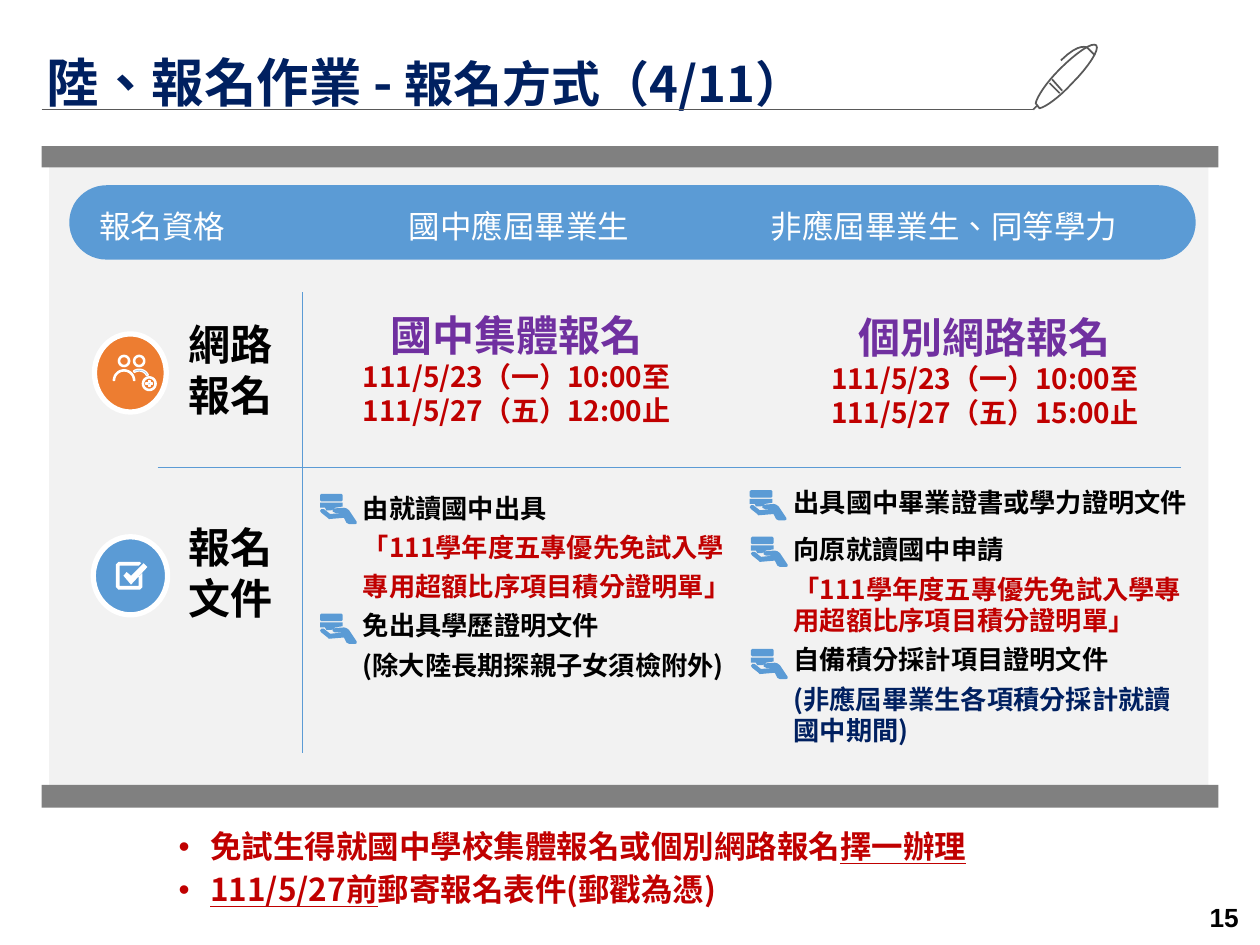
from math import cos, radians, sin

from lxml.etree import SubElement as Sub
from pptx import Presentation
from pptx.dml.color import RGBColor as RGB
from pptx.enum.shapes import MSO_CONNECTOR as Link, MSO_SHAPE as Kind
from pptx.enum.text import MSO_ANCHOR as Anchor, MSO_AUTO_SIZE as Fit, PP_ALIGN as Align
from pptx.oxml.ns import qn
from pptx.util import Inches, Pt

# Theme: colours, type sizes and fonts
look = {
    "blue": "5B9BD5", "orange": "ED7D31", "white": "FFFFFF", "panel": "F2F2F2",
    "bar": "808080", "pen": "595959", "black": "000000", "red": "C00000",
    "violet": "7030A0", "navy": "002060",
    "title": 30, "sub": 28, "head": 24, "note": 18, "date": 16, "item": 15,
    "font": "Noto Sans CJK SC", "num": "Arial",
}
ink = {k: RGB.from_string(v) for k, v in look.items()
       if isinstance(v, str) and len(v) == 6}

deck = Presentation()
deck.slide_width, deck.slide_height = Inches(10), Inches(7.5)
slide = deck.slides.add_slide(deck.slide_layouts[5])
parts = slide.shapes
cell = deck.slide_width // 100  # the slide is a grid of 100 columns by 75 rows


def write(frame, paras, box, para, font=look["font"]):
    """Fill a frame; a run is (text, size, colour, extra font values)."""
    for key, val in box.items():
        setattr(frame, key, val)
    for i, runs in enumerate(paras):
        p = frame.paragraphs[0] if i == 0 else frame.add_paragraph()
        for key, val in para.items():
            setattr(p, key, val)
        for words, size, tone, *more in runs:
            run = p.add_run()
            run.text = words
            form = {"name": font, "size": Pt(look[size]), "bold": True}
            for extra in more:
                form.update(extra)
            for key, val in form.items():
                setattr(run.font, key, val)
            run.font.color.rgb = ink[tone]
            run.font._element.set("lang", "zh-TW")
            Sub(run.font._element, qn("a:ea"), typeface=font)


def draw(paths, fill=None, line=None, width=1, close=True, at=(0, 0)):
    """Draw outlines; a step is a point, or six numbers for a curve."""
    build = None
    for path in paths:
        dots = [path[0]]
        for step in path[1:]:
            if len(step) == 2:
                dots.append(step)
                continue
            a, b, c, d, e, f = step
            x, y = dots[-1]
            for t in [n / 8 for n in range(1, 9)]:
                s = 1 - t
                w = s ** 3, 3 * s * s * t, 3 * s * t * t, t ** 3
                dots.append((w[0] * x + w[1] * a + w[2] * c + w[3] * e,
                             w[0] * y + w[1] * b + w[2] * d + w[3] * f))
        spots = [((x + at[0]) * cell, (y + at[1]) * cell) for x, y in dots]
        if build is None:
            build = parts.build_freeform(*spots[0])
        else:
            build.move_to(*spots[0])
        build.add_line_segments(spots[1:], close=close)
    form = build.convert_to_shape()
    form.shadow.inherit = False
    if fill:
        form.fill.solid()
        form.fill.fore_color.rgb = ink[fill]
    else:
        form.fill.background()
    if line:
        form.line.color.rgb, form.line.width = ink[line], Pt(width)
    else:
        form.line.fill.background()


# Title
title = parts.title
for key, val in zip(("left", "top", "width", "height"), (2.7, 4, 78.9, 4.8)):
    setattr(title, key, round(val * cell))
write(title.text_frame,
      [[("陸、報名作業 - ", "title", "navy"), ("報名方式（4/11）", "sub", "navy")]],
      {"auto_size": Fit.NONE, "word_wrap": True, "vertical_anchor": Anchor.TOP},
      {"alignment": Align.LEFT, "line_spacing": 0.9})

# Panel, bars, header band and icon discs
for kind, left, top, wide, high, fill, edge in [
    (Kind.RECTANGLE, 3.9, 12.5, 92, 49.8, "panel", 0),
    (Kind.RECTANGLE, 3.3, 11.6, 93.4, 1.7, "bar", 0),
    (Kind.RECTANGLE, 3.3, 62.3, 93.4, 1.8, "bar", 0),
    (Kind.OVAL, 7.5, 26.5, 5.7, 6.2, "orange", 3),
    (Kind.OVAL, 7.4, 42.6, 5.9, 6.2, "blue", 3),
    (Kind.ROUNDED_RECTANGLE, 5.5, 14.7, 89.4, 5.9, "blue", 0),
]:
    form = parts.add_shape(kind, *[round(v * cell) for v in (left, top, wide, high)])
    form.shadow.inherit = False
    form.fill.solid()
    form.fill.fore_color.rgb = ink[fill]
    if edge:
        form.line.color.rgb, form.line.width = ink["white"], Pt(edge)
    else:
        form.line.fill.background()

# Header words, set on tab stops
band = form
band.adjustments[0] = 0.5
write(band.text_frame,
      [[("報名資格\t國中應屆畢業生\t非應屆畢業生、同等學力", "note", "white", {"bold": False})]],
      {"vertical_anchor": Anchor.MIDDLE, "margin_left": Inches(0.15)},
      {"alignment": Align.LEFT, "line_spacing": 1.2})
tabs = Sub(band.text_frame.paragraphs[0]._p.get_or_add_pPr(), qn("a:tabLst"))
for stop in (24.6, 53.3):
    Sub(tabs, qn("a:tab"), pos=str(round(stop * cell)), algn="l")

# Rules
for x, y, right, low, tone, width in [
    (12.5, 37.1, 93.7, 37.1, "blue", 0.25),
    (24, 23.2, 24, 59.8, "blue", 0.25),
    (3.3, 8.7, 82, 8.7, "pen", 0.5),
]:
    rule = parts.add_connector(Link.STRAIGHT, *[round(v * cell) for v in (x, y, right, low)])
    rule.line.color.rgb, rule.line.width = ink[tone], Pt(width)
    Sub(rule._element.spPr, qn("a:effectLst"))

# Text blocks
tight = {"word_wrap": False, "vertical_anchor": Anchor.BOTTOM,
         "margin_left": Inches(0.07), "margin_right": Inches(0.07),
         "margin_top": Inches(0.04), "margin_bottom": Inches(0.04)}
label = {**tight, "word_wrap": True}
grow = {"word_wrap": True, "auto_size": Fit.SHAPE_TO_FIT_TEXT}
wrap = {"word_wrap": True}
mid = {"alignment": Align.CENTER}
list_gap = {"space_before": Pt(2.2), "space_after": Pt(2.2)}
point = {"line_spacing": 0.9, "space_before": Pt(10)}
under = {"underline": True}
blocks = {}
for name, place, box, para, paras in [
    ("web", (14.3, 25, 9, 8.7), label, {},
     [[("網路", "head", "black")], [("報名", "head", "black")]]),
    ("papers", (14.3, 41.7, 9, 8.1), label, {},
     [[("報名", "head", "black")], [("文件", "head", "black")]]),
    ("group", (26.2, 24.8, 29.6, 9.5), tight, mid,
     [[("國中集體報名", "head", "violet")],
      [("111/5/23（一）10:00至", "date", "red")],
      [(" 111/5/27（五）12:00止 ", "date", "red")]]),
    ("single", (62.6, 24.2, 31.1, 9.5), grow, mid,
     [[("個別網路報名", "head", "violet")],
      [("111/5/23（一）10:00至", "date", "red")],
      [("111/5/27（五）15:00止", "date", "red")]]),
    ("school", (28.1, 38.4, 31.3, 16), tight, list_gap,
     [[("由就讀國中出具", "item", "black")],
      [("「111學年度五專優先免試入學", "item", "red")],
      [("專用超額比序項目積分證明單」", "item", "red")],
      [("免出具學歷證明文件", "item", "black")],
      [("(除大陸長期探親子女須檢附外)", "item", "black")]]),
    ("own", (62, 38.1, 33.3, 22), grow, {"space_before": Pt(4.5)},
     [[("出具國中畢業證書或學力證明文件", "item", "black")],
      [("向原就讀國中申請", "item", "black")],
      [("「111學年度五專優先免試入學專用超額比序項目積分證明單」", "item", "red")],
      [("自備積分採計項目證明文件", "item", "black")],
      [("(非應屆畢業生各項積分採計就讀國中期間)", "item", "navy")]]),
    ("choice", (13.2, 65.5, 68, 3.1), wrap, point,
     [[("免試生得就國中學校集體報名或個別網路報名", "note", "red"),
       ("擇一辦理", "note", "red", under)]]),
    ("post", (13.2, 68.9, 45.7, 3.1), wrap, point,
     [[("111/5/27前", "note", "red", under), ("郵寄報名表件(郵戳為憑)", "note", "red")]]),
    ("page", (76.8, 71.3, 22.5, 3), {**wrap, "vertical_anchor": Anchor.MIDDLE},
     {"alignment": Align.RIGHT}, [[("15", "item", "black")]]),
]:
    frame = parts.add_textbox(*[round(v * cell) for v in place]).text_frame
    write(frame, paras, box, para, look["num" if name == "page" else "font"])
    blocks[name] = frame
blocks["own"].paragraphs[1].space_before = Pt(9)
for name in ("choice", "post"):
    props = blocks[name].paragraphs[0]._p.get_or_add_pPr()
    props.set("marL", str(Inches(0.25)))
    props.set("indent", str(-Inches(0.25)))
    Sub(props, qn("a:buFont"), typeface=look["num"])
    Sub(props, qn("a:buChar"), char="•")

# Hands that mark the items
palm = [(1.9, 1.1), (2.1, 1.15), (2.3, 1.3), (2.9, 2.2), (2.9, 2.35), (2.8, 2.4),
        (2.3, 2.4), (2.1, 2.3), (1.9, 1.9), (0.7, 2), (0.6, 1.9), (0.1, 1.5),
        (0, 1.35), (0.1, 1.2), (0.3, 1.2), (0.8, 1.6), (1.9, 1.5), (1.2, 1.5),
        (1, 1.4), (1, 1.25), (1.2, 1.15)]
cuff = [(0, 0.7), (1.8, 0.7), (1.8, 1), (1.2, 1.1), (0.9, 1.3), (0.5, 1.3),
        (0.4, 1.1), (0, 1.1)]
coin = [(0.1, 0), (1.7, 0), (1.8, 0.1), (1.8, 0.5), (1.7, 0.6), (0.1, 0.6),
        (0, 0.5), (0, 0.1)]
for spot in [(25.4, 39.2), (25.4, 48.7), (59.5, 38.9), (59.6, 42.6), (59.6, 51.5)]:
    draw([palm, cuff, coin], "blue", at=spot)

# People icon: heads, shoulders, and a badge with a plus
bands = []
for x, y, far, near, start, end in [
    (9.85, 28.65, 0.45, 0.35, 0, 360), (11.05, 28.65, 0.45, 0.35, 0, 360),
    (11.85, 30.45, 0.55, 0.45, 0, 360), (9.85, 30.2, 0.85, 0.75, 180, 360),
    (11.05, 30.1, 0.8, 0.65, 235, 335),
]:
    turns = [radians(start + (end - start) * n / 24) for n in range(25)]
    bands.append([(x + far * cos(a), y + far * sin(a)) for a in turns]
                 + [(x + near * cos(a), y + near * sin(a)) for a in turns[::-1]])
plus = [(11.8, 30.2), (11.9, 30.2), (11.9, 30.4), (12.1, 30.4), (12.1, 30.5), (11.9, 30.5),
        (11.9, 30.7), (11.8, 30.7), (11.8, 30.5), (11.6, 30.5), (11.6, 30.4), (11.8, 30.4)]
draw([*bands, plus], "blue", "white", 0.75)

# Tick box icon
tick = [(11.4, 44.7), (11.7, 45), (10.4, 46.4), (9.8, 45.7), (10.05, 45.4),
        (10.4, 45.7)]
frame = [(9.4, 44.6), (11.1, 44.6), (11.2, 44.7), (11, 44.9), (9.5, 44.9), (9.5, 46.5),
         (11, 46.5), (11, 45.8), (11.3, 45.5), (11.3, 46.6), (11.1, 46.8),
         (9.4, 46.8), (9.2, 46.6), (9.2, 44.8)]
draw([tick, frame], "white")

# Pen at the end of the title rule
draw([
    [(84.1, 7.4), (83.3, 6.6)],
    [(83.5, 6.3), (84.3, 7.2)],
    [(87, 3.6), (86.7, 3.3, 85.4, 4.2, 84.1, 5.5), (83, 6.6, 82.3, 7.7, 82.2, 8.2),
     (82.5, 8.6), (83, 8.5, 84.1, 7.7, 85.1, 6.6), (86.4, 5.3, 87.3, 3.9, 87, 3.6)],
    [(82.3, 8.4), (82, 8.7)],
    [(86.9, 4.4), (86.3, 3.8), (86.3, 3.8, 85.7, 3.3, 84.2, 4.8)],
], line="pen", close=False)

deck.save("out.pptx")
